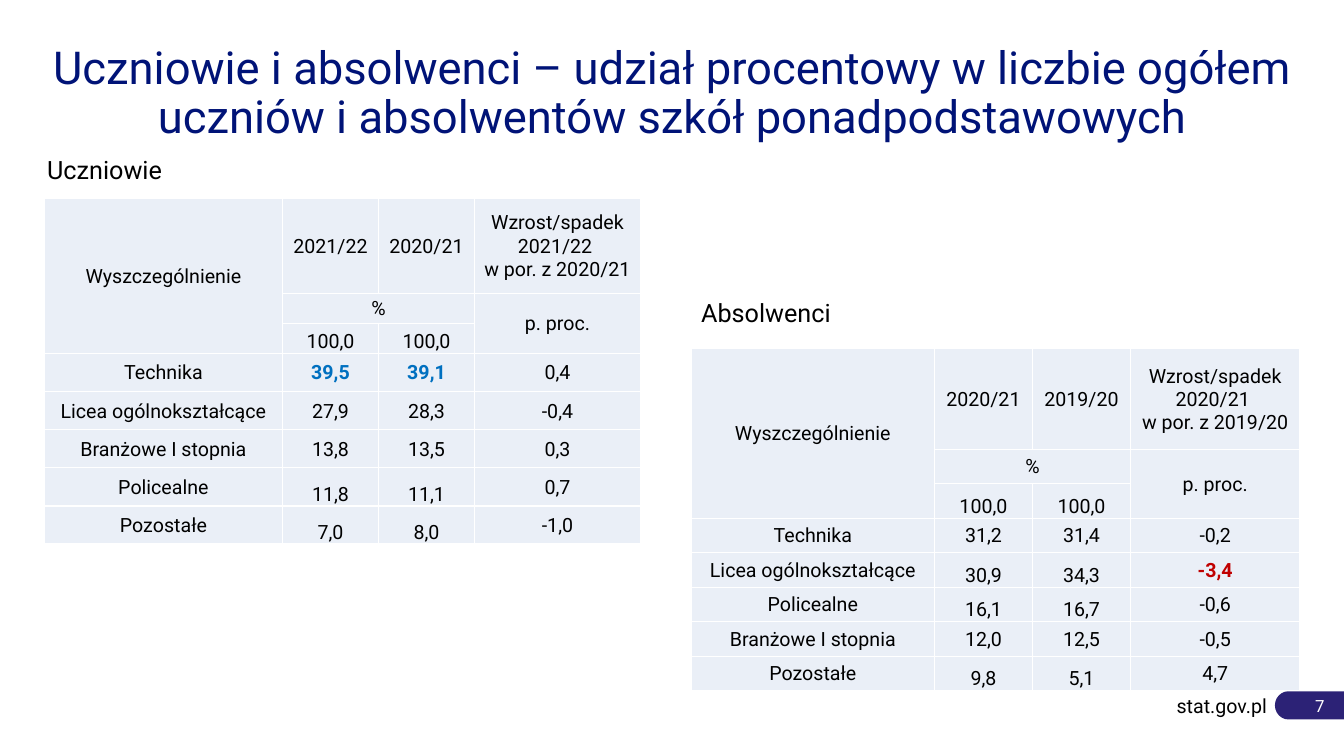
from dataclasses import dataclass

from lxml import etree
from pptx import Presentation
from pptx.dml.color import RGBColor
from pptx.enum import shapes, text
from pptx.oxml import ns
from pptx.util import Cm, Pt

MID, LOW = text.MSO_ANCHOR.MIDDLE, text.MSO_ANCHOR.BOTTOM
TOP = text.MSO_ANCHOR.TOP
LEFT, MIDDLE, RIGHT = text.PP_ALIGN.LEFT, text.PP_ALIGN.CENTER, text.PP_ALIGN.RIGHT


@dataclass(frozen=True)
class Theme:
    font: str = "Roboto"
    ink: str = "000000"
    navy: str = "001377"
    pill: str = "2C2276"
    white: str = "FFFFFF"
    cell: str = "EAEFF7"
    blue: str = "0070C0"
    red: str = "C00000"
    title: float = 32.4
    label: float = 18
    body: float = 14
    page: float = 12


THEME = Theme()

# Name, later year, earlier year, change, anchor of the two year values
PUPILS = [
    ("Technika", "39,5", "39,1", "0,4", MID),
    ("Licea ogólnokształcące", "27,9", "28,3", "-0,4", MID),
    ("Branżowe I stopnia", "13,8", "13,5", "0,3", MID),
    ("Policealne", "11,8", "11,1", "0,7", LOW),
    ("Pozostałe", "7,0", "8,0", "-1,0", LOW),
]
GRADS = [
    ("Technika", "31,2", "31,4", "-0,2", MID),
    ("Licea ogólnokształcące", "30,9", "34,3", "-3,4", LOW),
    ("Policealne", "16,1", "16,7", "-0,6", LOW),
    ("Branżowe I stopnia", "12,0", "12,5", "-0,5", MID),
    ("Pozostałe", "9,8", "5,1", "4,7", LOW),
]


def write(para, words, size, color, align, bold=False):
    para.alignment = align
    run = para.add_run()
    run.text = words
    font = run.font
    font.name, font.size, font.bold = THEME.font, Pt(size), bold
    font.color.rgb = RGBColor.from_string(color)


def inset(item, left, top, right, bottom):
    item.margin_left, item.margin_top = Cm(left), Cm(top)
    item.margin_right, item.margin_bottom = Cm(right), Cm(bottom)


def add_text(slide, box, words, size, color, align=LEFT, anchor=TOP, side=0.25):
    frame = slide.shapes.add_textbox(*map(Cm, box)).text_frame
    frame.word_wrap = True
    frame.vertical_anchor = anchor
    inset(frame, side, 0.13, side, 0.13)
    write(frame.paragraphs[0], words, size, color, align)
    return frame


def add_pill(slide, box, words):
    pill = slide.shapes.add_shape(
        shapes.MSO_SHAPE.FLOWCHART_TERMINATOR, *map(Cm, box))
    pill.shadow.inherit = False
    pill.fill.solid()
    pill.fill.fore_color.rgb = RGBColor.from_string(THEME.pill)
    pill.line.fill.background()
    frame = pill.text_frame
    frame.vertical_anchor = MID
    inset(frame, 0.1, 0.13, 0.76, 0.13)
    write(frame.paragraphs[0], words, THEME.page, THEME.white, RIGHT)


def style(cell):
    """Give a cell its white borders, fill and insets."""
    props = cell._tc.get_or_add_tcPr()
    for side in "LRTB":
        line = etree.SubElement(props, ns.qn(f"a:ln{side}"), w=str(Pt(1)))
        fill = etree.SubElement(line, ns.qn("a:solidFill"))
        etree.SubElement(fill, ns.qn("a:srgbClr"), val=THEME.white)
    cell.fill.solid()
    cell.fill.fore_color.rgb = RGBColor.from_string(THEME.cell)
    inset(cell, 0.03, 0.03, 0.03, 0)


def fill_cell(cell, words, anchor=MID, accent=None):
    cell.vertical_anchor = anchor
    frame = cell.text_frame
    for i, line in enumerate(words.split("\n")):
        para = frame.add_paragraph() if i else frame.paragraphs[0]
        write(para, line, THEME.body, accent or THEME.ink, MIDDLE, bool(accent))


def add_grid(slide, spot, cols, rows, years, data, accents):
    """Draw a table of shares; accents maps (data row, column) to a colour."""
    size = sum(cols), sum(rows)
    grid = slide.shapes.add_table(
        len(rows), len(cols), *map(Cm, (*spot, *size))).table
    grid.first_row = grid.horz_banding = False
    for col, width in zip(grid.columns, cols):
        col.width = Cm(width)
    for row, height in zip(grid.rows, rows):
        row.height = Cm(height)
    for cell in grid.iter_cells():
        style(cell)
    for start, end in (((0, 0), (2, 0)), ((1, 1), (1, 2)), ((1, 3), (2, 3))):
        grid.cell(*start).merge(grid.cell(*end))

    new, old = years
    change = f"Wzrost/spadek {new} \nw por. z {old}"
    for c, words in enumerate(("Wyszczególnienie", new, old, change)):
        fill_cell(grid.cell(0, c), words)
    fill_cell(grid.cell(1, 1), "%")
    fill_cell(grid.cell(1, 3), "p. proc.")
    for c in (1, 2):
        fill_cell(grid.cell(2, c), "100,0", LOW)
    for r, (*items, anchor) in enumerate(data):
        for c, words in enumerate(items):
            fill_cell(grid.cell(r + 3, c), words,
                      anchor if c in (1, 2) else MID, accents.get((r, c)))


def main():
    deck = Presentation()
    deck.slide_width, deck.slide_height = Cm(33.87), Cm(19.05)
    slide = deck.slides.add_slide(deck.slide_layouts[6])

    add_pill(slide, (32.13, 17.42, 2.11, 0.71), "7")
    add_text(slide, (29.44, 17.35, 2.49, 0.86), "stat.gov.pl",
             THEME.body, THEME.ink, RIGHT, MID, 0)
    title = add_text(
        slide, (0.94, 0.3, 32, 3.43),
        "Uczniowie i absolwenci – udział procentowy w liczbie ogółem "
        "uczniów i absolwentów szkół ponadpodstawowych",
        THEME.title, THEME.navy, MIDDLE, LOW, 0)
    title.paragraphs[0].line_spacing = 0.9
    add_text(slide, (0.94, 3.76, 4.34, 1.07), "Uczniowie",
             THEME.label, THEME.ink)
    add_text(slide, (17.42, 7.37, 4.45, 1.02), "Absolwenci",
             THEME.label, THEME.ink)

    add_grid(slide, (1.12, 5), (6, 2.42, 2.42, 4.18),
             [2.39] + [0.76] * 2 + [0.96] * 5, ("2021/22", "2020/21"),
             PUPILS, {(0, 1): THEME.blue, (0, 2): THEME.blue})
    add_grid(slide, (17.42, 8.79), (6.13, 2.47, 2.47, 4.27),
             [2.53] + [0.87] * 7, ("2020/21", "2019/20"),
             GRADS, {(1, 3): THEME.red})
    deck.save("out.pptx")


if __name__ == "__main__":
    main()
